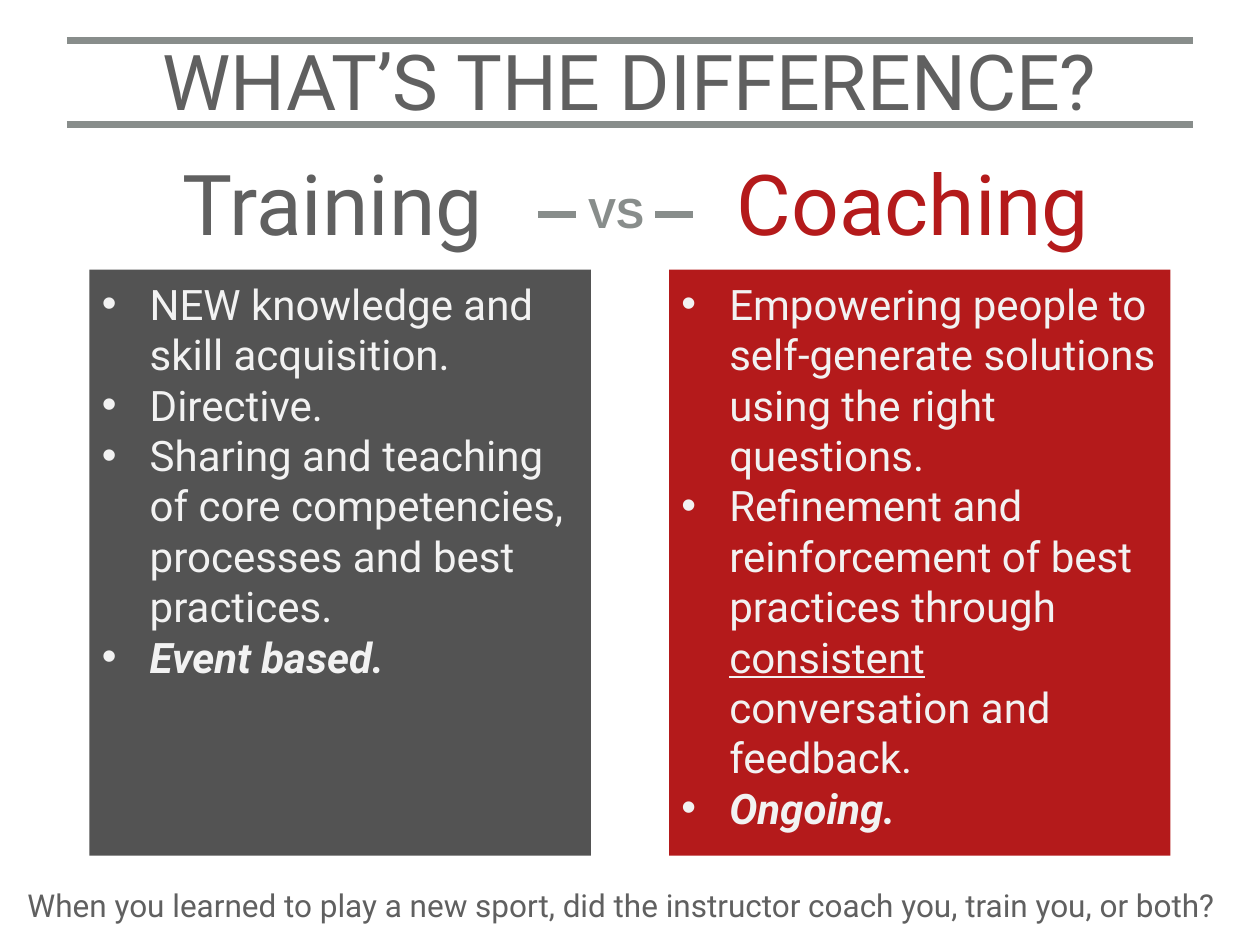
import dataclasses
import typing

import lxml.etree
import pptx
import pptx.dml.color
import pptx.enum.shapes
import pptx.enum.text
import pptx.oxml.ns
import pptx.util

SCALE = 9144  # EMU per px, 100 px to the inch


@dataclasses.dataclass(frozen=True)
class Theme:
    gray: str = "606060"
    rule: str = "888D8B"
    dark: str = "535353"
    red: str = "B41A1B"
    pale: str = "F2F2F2"
    font: str = "Roboto"
    plain: str = "Arial"
    title: int = 44
    head: int = 48
    body: int = 24
    note: int = 18
    line: int = 4


THEME = Theme()


class Box(typing.NamedTuple):
    left: int
    top: int
    width: int
    height: int


class Run(typing.NamedTuple):
    text: str
    style: dict = {}


class Label(typing.NamedTuple):
    text: str
    box: Box
    size: int
    color: str
    font: str = THEME.font
    style: dict = {}
    wrap: bool = False
    center: bool = False


class Rule(typing.NamedTuple):
    left: int
    right: int
    top: int


class Panel(typing.NamedTuple):
    left: int
    fill: str
    depth: int
    items: list[list[Run]]


STRONG = {"bold": True, "italic": True}
LABELS = [
    Label("WHAT’S THE DIFFERENCE?", Box(0, 22, 1000, 84), THEME.title,
          THEME.gray, wrap=True, center=True),
    Label("Training", Box(135, 115, 264, 91), THEME.head, THEME.gray),
    Label("Coaching", Box(575, 115, 310, 91), THEME.head, THEME.red),
    Label("VS", Box(457, 143, 65, 50), THEME.body, THEME.rule,
          THEME.plain, {"bold": True}),
    Label("When you learned to play a new sport, did the instructor "
          "coach you, train you, or both?",
          Box(12, 698, 984, 40), THEME.note, THEME.gray),
]
RULES = [
    Rule(53, 947, 32), Rule(53, 947, 99),
    Rule(427, 457, 170), Rule(520, 550, 170),
]
PANELS = [
    Panel(71, THEME.dark, 333, [
        [Run("NEW knowledge and skill acquisition.")],
        [Run("Directive.")],
        [Run("Sharing and teaching of core competencies, "
             "processes and best practices.")],
        [Run("Event based.", STRONG)],
    ]),
    Panel(531, THEME.red, 454, [
        [Run("Empowering people to self-generate solutions "
             "using the right questions.")],
        [Run("Refinement and reinforcement of best practices through "),
         Run("consistent", {"underline": True}),
         Run(" conversation and feedback.")],
        [Run("Ongoing.", STRONG)],
    ]),
]


def px(count: int) -> pptx.util.Emu:
    return pptx.util.Emu(count * SCALE)


def place(box: Box) -> list[pptx.util.Emu]:
    return [px(side) for side in box]


def rgb(code: str) -> pptx.dml.color.RGBColor:
    return pptx.dml.color.RGBColor.from_string(code)


def format_font(font, style: dict) -> None:
    for key, value in style.items():
        setattr(font, key, value)


def add_frame(shapes, box: Box, wrap: bool):
    """Add a text box that grows with its text and return its frame."""
    frame = shapes.add_textbox(*place(box)).text_frame
    frame.word_wrap = wrap
    frame.auto_size = pptx.enum.text.MSO_AUTO_SIZE.SHAPE_TO_FIT_TEXT
    return frame


def add_run(para, run: Run, size: int, color: str, font: str) -> None:
    part = para.add_run()
    part.text = run.text
    base = {"name": font, "size": pptx.util.Pt(size)}
    format_font(part.font, base | run.style)
    part.font.color.rgb = rgb(color)


def add_label(shapes, label: Label) -> None:
    para = add_frame(shapes, label.box, label.wrap).paragraphs[0]
    if label.center:
        para.alignment = pptx.enum.text.PP_ALIGN.CENTER
    add_run(para, Run(label.text, label.style), label.size, label.color,
            label.font)


def add_rule(shapes, rule: Rule) -> None:
    line = shapes.add_connector(
        pptx.enum.shapes.MSO_CONNECTOR.STRAIGHT,
        px(rule.left), px(rule.top), px(rule.right), px(rule.top))
    line.line.color.rgb = rgb(THEME.rule)
    line.line.width = pptx.util.Pt(THEME.line)
    lxml.etree.SubElement(line._element.spPr,
                          pptx.oxml.ns.qn("a:effectLst"))


def add_bullet(para) -> None:
    props = para._p.get_or_add_pPr()
    props.set("marL", str(px(38)))
    props.set("indent", str(px(-38)))
    for tag, key, value in (("a:buFont", "typeface", THEME.plain),
                            ("a:buChar", "char", "•")):
        lxml.etree.SubElement(props, pptx.oxml.ns.qn(tag)).set(key, value)


def add_panel(shapes, panel: Panel) -> None:
    """Group a filled card with its bulleted list."""
    group = shapes.add_group_shape().shapes
    card = group.add_shape(pptx.enum.shapes.MSO_SHAPE.RECTANGLE,
                           *place(Box(panel.left, 214, 398, 465)))
    card.shadow.inherit = False
    card.fill.solid()
    card.fill.fore_color.rgb = rgb(panel.fill)
    card.line.fill.background()
    frame = add_frame(group, Box(panel.left, 216, 398, panel.depth), True)
    for index, item in enumerate(panel.items):
        para = frame.add_paragraph() if index else frame.paragraphs[0]
        add_bullet(para)
        for run in item:
            add_run(para, run, THEME.body, THEME.pale, THEME.font)


def main() -> None:
    deck = pptx.Presentation()
    deck.slide_width, deck.slide_height = px(1000), px(750)
    shapes = deck.slides.add_slide(deck.slide_layouts[6]).shapes
    for draw, parts in ((add_rule, RULES), (add_panel, PANELS),
                        (add_label, LABELS)):
        for part in parts:
            draw(shapes, part)
    deck.save("out.pptx")


if __name__ == "__main__":
    main()
